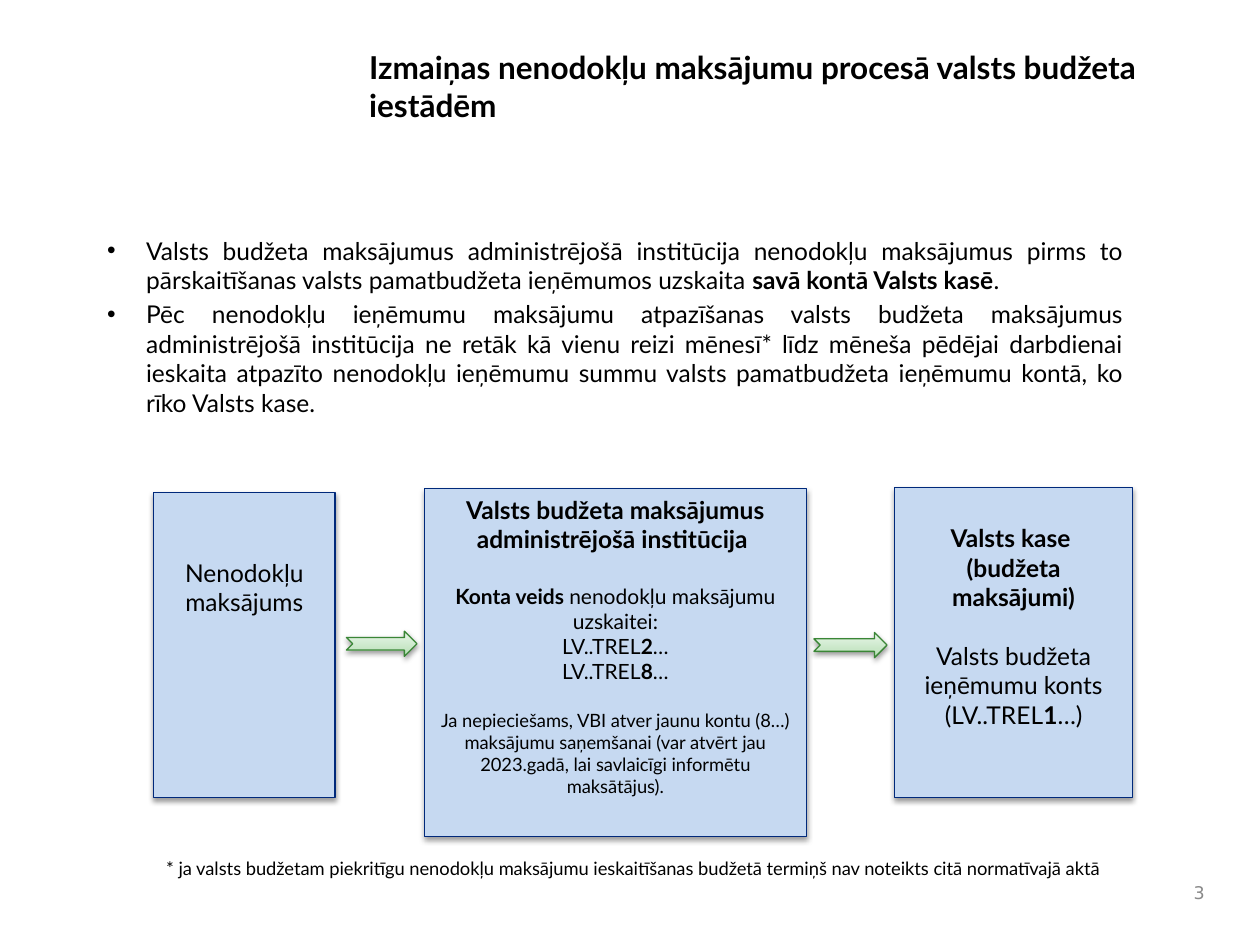
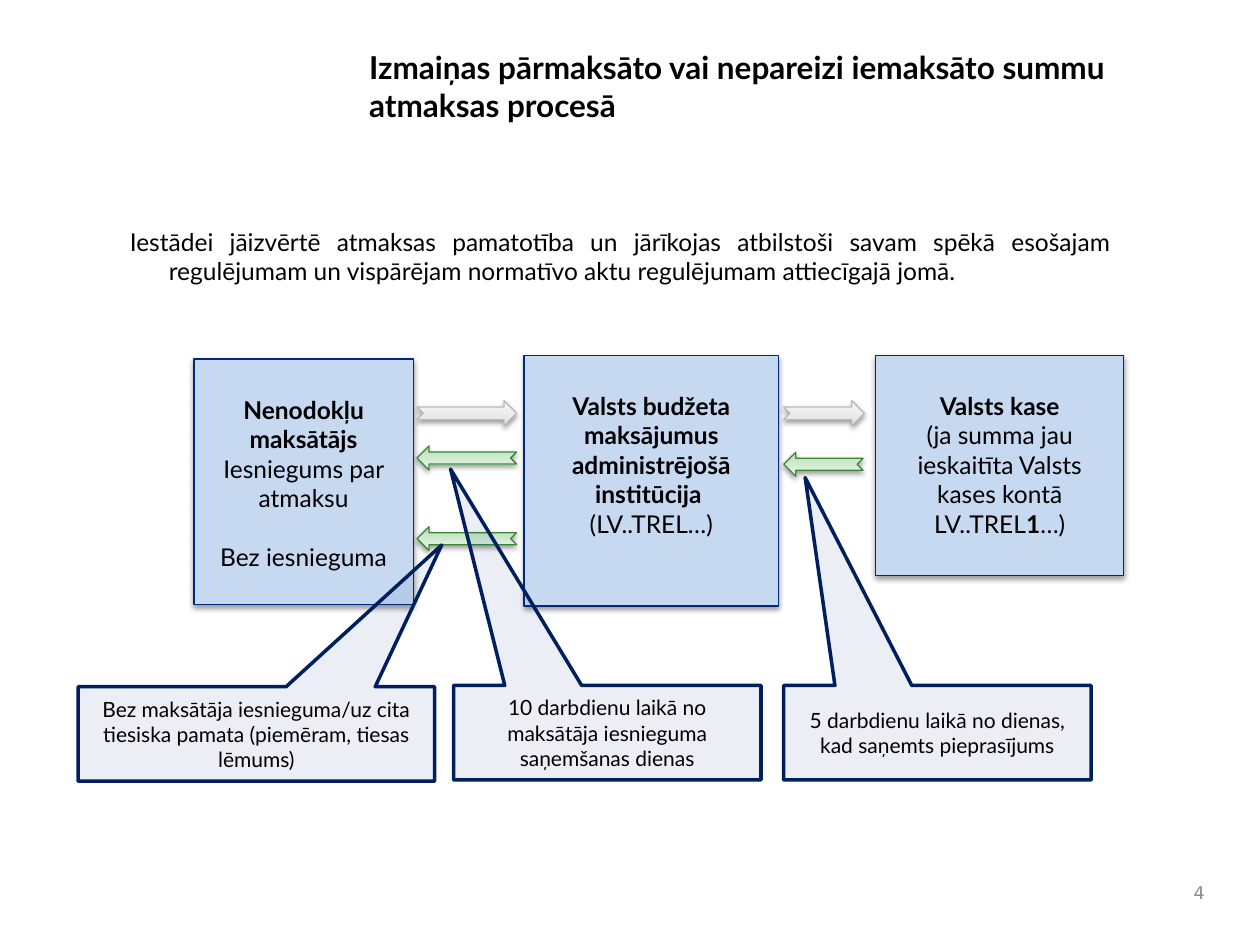
"""Build two slides on changes in non-tax payment and refund flows."""
from copy import deepcopy

from lxml.etree import SubElement
from pptx import Presentation
from pptx.dml.color import RGBColor as Rgb
from pptx.enum.shapes import MSO_SHAPE as Kind
from pptx.enum.text import MSO_ANCHOR as Anchor, MSO_AUTO_SIZE as Auto, PP_ALIGN as Align
from pptx.oxml.ns import qn
from pptx.util import Inches, Pt

HUES = {
    "text": "000000", "page": "898989", "box": "C6D9F1", "edge": "00297B",
    "note": "002A7E", "rim": "001F5D", "green": "3A8636", "gray": "BBBBBB",
}
RAMPS = {
    "green": ("B1DEB0", "C9E7C8", "EAF6EA"),
    "gray": ("E2E2E2", "EAEAEA", "F7F7F7"),
}
FONT = "Lato"
ROW = 16.8


def write(frame, paras, align, font=FONT, hue="text"):
    """Add (size, space before, text) paragraphs; bars switch bold on and off."""
    frame.word_wrap = True
    frame.auto_size = Auto.NONE
    for i, (size, gap, text) in enumerate(paras):
        para = frame.add_paragraph() if i else frame.paragraphs[0]
        para.alignment = align
        para.space_before = Pt(gap)
        for j, part in enumerate(text.split("|")):
            if part:
                run = para.add_run()
                run.text = part
                run.font.name = font
                run.font.size = Pt(size)
                run.font.bold = j % 2 == 1
                run.font.color.rgb = Rgb.from_string(HUES[hue])


def draw(slide, kind, area, edge, width, shade=True):
    """Add an outlined shape, with a soft shadow if wanted."""
    shape = slide.shapes.add_shape(kind, *map(Inches, area))
    shape.line.color.rgb = Rgb.from_string(HUES[edge])
    shape.line.width = Pt(width)
    shape.shadow.inherit = False
    if shade:
        glow = SubElement(
            shape.element.spPr.find(qn("a:effectLst")), qn("a:outerShdw"),
            blurRad=str(Pt(3.1)), dist=str(Pt(1.6)), dir="5400000", rotWithShape="0")
        tint = SubElement(glow, qn("a:srgbClr"), val="000000")
        SubElement(tint, qn("a:alpha"), val="38000")
    return shape


PAGES = [
    {
        "title": "Izmaiņas nenodokļu maksājumu procesā valsts budžeta iestādēm",
        "wide": 6.36,
        "body": (0.75, 1.82, 8.27, 1.88),
        "dot": "•",
        "list": [
            (14, 0, "Valsts budžeta maksājumus administrējošā institūcija nenodokļu maksājumus "
             "pirms to pārskaitīšanas valsts pamatbudžeta ieņēmumos uzskaita "
             "|savā kontā Valsts kasē|."),
            (14, 2.8, "Pēc nenodokļu ieņēmumu maksājumu atpazīšanas valsts budžeta maksājumus "
             "administrējošā institūcija ne retāk kā vienu reizi mēnesī* līdz mēneša pēdējai "
             "darbdienai ieskaita atpazīto nenodokļu ieņēmumu summu valsts pamatbudžeta "
             "ieņēmumu kontā, ko rīko Valsts kase."),
        ],
        "boxes": [
            ((1.22, 3.91, 1.44, 2.42), 2, [(14, 0, "Nenodokļu maksājums")]),
            ((3.37, 3.88, 3.03, 2.76), 0, [
                (14, 0, "|Valsts budžeta maksājumus administrējošā institūcija "),
                (12, ROW, "|Konta veids |nenodokļu maksājumu uzskaitei:"),
                (12, 0, "LV..TREL|2|…"),
                (12, 0, "LV..TREL|8|…"),
                (10.5, 14.4, "Ja nepieciešams, VBI atver jaunu kontu (8…) maksājumu saņemšanai "
                 "(var atvērt jau 2023.gadā, lai savlaicīgi informētu maksātājus)."),
            ]),
            ((7.1, 3.87, 1.89, 2.46), 1, [
                (14, 0, "|Valsts kase "),
                (14, 0, "|(budžeta maksājumi)"),
                (14, ROW, "Valsts budžeta ieņēmumu konts"),
                (14, 0, "(LV..TREL|1|…)"),
            ]),
        ],
        "arrows": [((2.75, 5.01, 0.56, 0.2), "green", 0), ((6.46, 5.02, 0.58, 0.2), "green", 0)],
        "calls": [],
        "foot": "* ja valsts budžetam piekritīgu nenodokļu maksājumu ieskaitīšanas budžetā "
                "termiņš nav noteikts citā normatīvajā aktā",
    },
    {
        "title": "Izmaiņas pārmaksāto vai nepareizi iemaksāto summu atmaksas procesā",
        "wide": 6.67,
        "body": (0.93, 1.75, 7.99, 0.84),
        "dot": "",
        "list": [
            (14, 0, "Iestādei jāizvērtē atmaksas pamatotība un jārīkojas atbilstoši savam spēkā "
             "esošajam regulējumam un vispārējam normatīvo aktu regulējumam attiecīgajā jomā."),
        ],
        "boxes": [
            ((1.54, 2.85, 1.74, 1.95), 1, [
                (14, 0, "|Nenodokļu maksātājs |Iesniegums par atmaksu"),
                (14, ROW, "Bez iesnieguma"),
            ]),
            ((4.16, 2.82, 2.02, 1.99), 1, [
                (14, 0, "|Valsts budžeta maksājumus administrējošā institūcija "),
                (14, 0, "(LV..TREL…)"),
            ]),
            ((6.95, 2.82, 1.97, 1.75), 1, [
                (14, 0, "|Valsts kase"),
                (14, 0, "(ja summa jau ieskaitīta Valsts kases kontā LV..TREL|1|…)"),
            ]),
        ],
        "arrows": [
            ((3.31, 3.18, 0.79, 0.2), "gray", 0),
            ((6.22, 3.18, 0.64, 0.2), "gray", 0),
            ((3.31, 3.54, 0.79, 0.19), "green", 180),
            ((3.31, 4.18, 0.79, 0.19), "green", 180),
            ((6.22, 3.59, 0.63, 0.19), "green", 180),
        ],
        "calls": [
            ((0.62, 5.45, 2.83, 0.75), (0.52, -2),
             "Bez maksātāja iesnieguma/uz cita tiesiska pamata (piemēram, tiesas lēmums)"),
            ((3.6, 5.44, 2.44, 0.75), (-0.51, -2.79),
             "10 darbdienu laikā no maksātāja iesnieguma saņemšanas dienas"),
            ((6.22, 5.44, 2.44, 0.75), (-0.43, -2.7),
             "5 darbdienu laikā no dienas, kad saņemts pieprasījums"),
        ],
        "foot": "",
    },
]

deck = Presentation()
deck.slide_width, deck.slide_height = Inches(10), Inches(7.5)

for num, page in enumerate(PAGES, 3):
    slide = deck.slides.add_slide(deck.slide_layouts[1])
    title, body = slide.placeholders
    spots = (title, (2.83, 0.33, page["wide"], 1.17)), (body, page["body"])
    for hold, area in spots:
        hold.left, hold.top, hold.width, hold.height = map(Inches, area)
        hold.text_frame.vertical_anchor = Anchor.TOP
    write(title.text_frame, [(18, 0, "|" + page["title"])], Align.LEFT)
    write(body.text_frame, page["list"], Align.JUSTIFY)
    for para in body.text_frame.paragraphs:
        props = para._p.get_or_add_pPr()
        props.set("marL", str(Inches(0.31)))
        props.set("indent", str(Inches(-0.31)))
        if page["dot"]:
            SubElement(props, qn("a:buFont"), typeface="Arial")
            SubElement(props, qn("a:buChar"), char=page["dot"])
        else:
            SubElement(props, qn("a:buNone"))

    for area, skip, paras in page["boxes"]:
        box = draw(slide, Kind.RECTANGLE, area, "edge", 0.75)
        box.fill.solid()
        box.fill.fore_color.rgb = Rgb.from_string(HUES["box"])
        box.text_frame.vertical_anchor = Anchor.TOP
        box.text_frame.margin_top = Inches(0.05) + Pt(skip * ROW)
        write(box.text_frame, paras, Align.CENTER)

    for area, hue, turn in page["arrows"]:
        arrow = draw(slide, Kind.NOTCHED_RIGHT_ARROW, area, hue, 0.75)
        arrow.rotation = turn
        arrow.fill.gradient()
        arrow.fill.gradient_angle = 90
        stops = arrow.element.spPr.find(qn("a:gradFill")).find(qn("a:gsLst"))
        stops.append(deepcopy(stops[-1]))
        for stop, at, tone in zip(arrow.fill.gradient_stops, (0, 0.35, 1), RAMPS[hue]):
            stop.position = at
            stop.color.rgb = Rgb.from_string(tone)

    for area, tip, text in page["calls"]:
        call = draw(slide, Kind.RECTANGULAR_CALLOUT, area, "rim", 2, False)
        call.adjustments[0], call.adjustments[1] = tip
        call.fill.solid()
        call.fill.fore_color.rgb = Rgb.from_string(HUES["note"])
        tint = call.element.spPr.find(qn("a:solidFill"))[0]
        SubElement(tint, qn("a:alpha"), val="8000")
        call.text_frame.vertical_anchor = Anchor.MIDDLE
        write(call.text_frame, [(12, 0, text)], Align.CENTER)

    if page["foot"]:
        foot = slide.shapes.add_textbox(*map(Inches, (1.22, 6.75, 7.79, 0.5)))
        write(foot.text_frame, [(10.5, 0, page["foot"])], Align.LEFT)
    mark = slide.shapes.add_textbox(*map(Inches, (9.33, 6.92, 0.33, 0.33)))
    mark.text_frame.vertical_anchor = Anchor.MIDDLE
    write(mark.text_frame, [(10, 0, str(num))], Align.RIGHT, "DejaVu Sans", "page")

deck.save("out.pptx")
